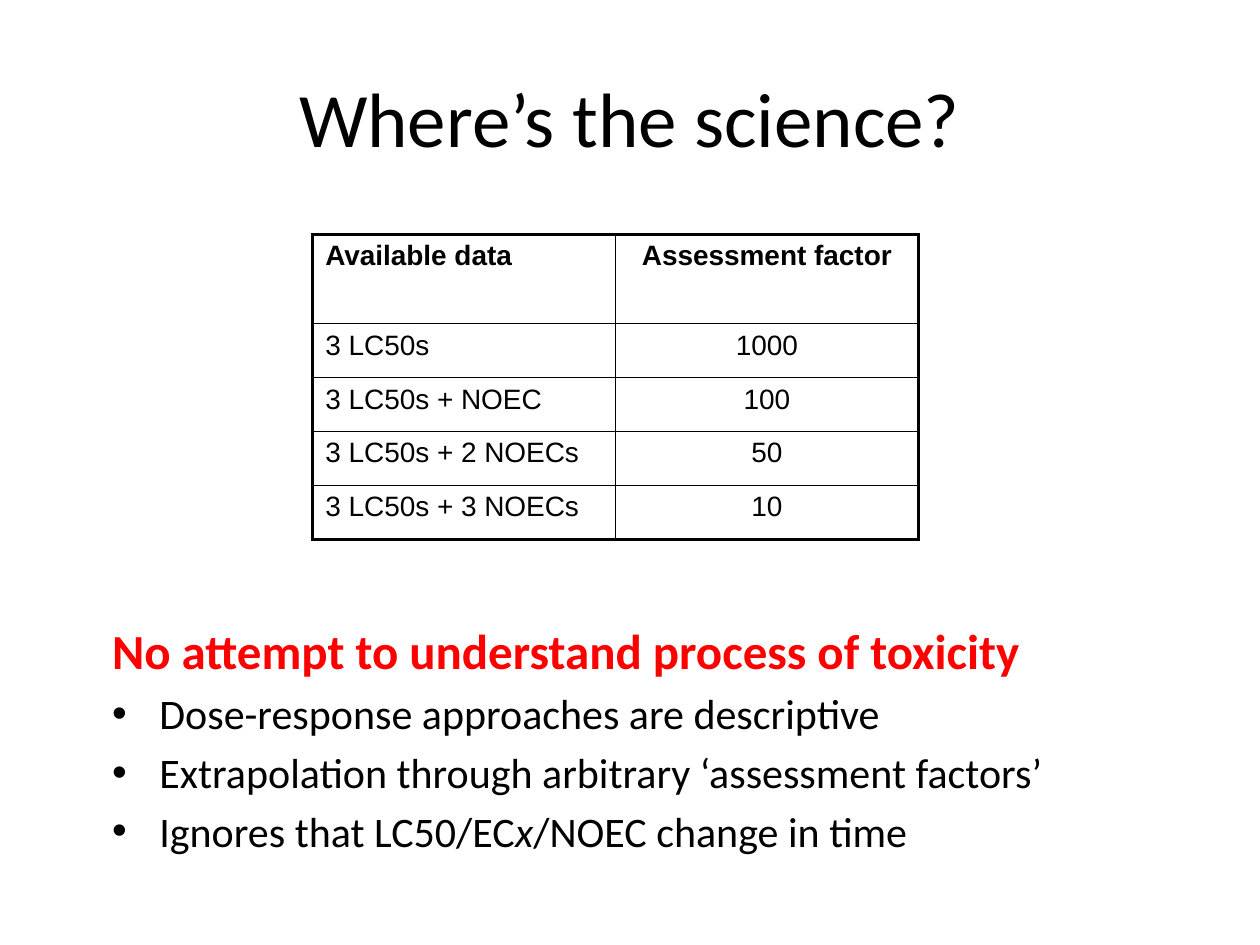
from pptx import Presentation
from pptx.dml.color import RGBColor as RGB
from pptx.enum.text import MSO_ANCHOR as Anchor, PP_ALIGN as Align
from pptx.oxml.ns import qn
from pptx.util import Pt
from lxml.etree import SubElement as Sub

BLACK = RGB(0, 0, 0)
RED = RGB(255, 0, 0)
THICK, THIN = 2.25, 1
INDENT = 27

ROWS = [
    ("Available data", "Assessment factor"),
    ("3 LC50s", "1000"),
    ("3 LC50s + NOEC", "100"),
    ("3 LC50s + 2 NOECs", "50"),
    ("3 LC50s + 3 NOECs", "10"),
]
POINTS = [
    [("Dose-response approaches are descriptive", False)],
    [("Extrapolation through arbitrary ‘assessment factors’", False)],
    [("Ignores that LC50/EC", False), ("x", True), ("/NOEC change in time", False)],
]


class Page:
    def __init__(self, slide, font, cell_font):
        self.slide = slide
        self.font = font
        self.cell_font = cell_font

    def box(self, left, top, width, height, anchor=Anchor.TOP):
        shape = self.slide.shapes.add_textbox(Pt(left), Pt(top), Pt(width), Pt(height))
        frame = shape.text_frame
        frame.word_wrap = True
        frame.vertical_anchor = anchor
        return frame

    def run(self, para, text, size, color=BLACK, bold=False, italic=False, name=None):
        run = para.add_run()
        run.text = text
        font = run.font
        font.name = name or self.font
        font.size = Pt(size)
        font.bold = bold
        font.italic = italic
        font.color.rgb = color

    def bullet(self, frame, parts, size):
        para = frame.add_paragraph()
        para.space_before = Pt(size * 0.2)
        props = para._p.get_or_add_pPr()
        props.set("marL", str(Pt(INDENT)))
        props.set("indent", str(Pt(-INDENT)))
        Sub(props, qn("a:buFont"), typeface="Arial")
        Sub(props, qn("a:buChar"), char="•")
        for text, italic in parts:
            self.run(para, text, size, italic=italic)

    def edge(self, cell, side, width):
        line = Sub(cell._tc.get_or_add_tcPr(), qn(f"a:ln{side}"), w=str(Pt(width)))
        fill = Sub(line, qn("a:solidFill"))
        Sub(fill, qn("a:srgbClr"), val=str(BLACK))

    def table(self, left, top, widths, heights, rows, size):
        frame = self.slide.shapes.add_table(
            len(rows), len(widths), Pt(left), Pt(top), Pt(sum(widths)), Pt(sum(heights))
        )
        table = frame.table
        table.first_row = table.horz_banding = False
        for col, width in zip(table.columns, widths):
            col.width = Pt(width)
        end_row, end_col = len(rows) - 1, len(widths) - 1
        for i, texts in enumerate(rows):
            table.rows[i].height = Pt(heights[i])
            for j, text in enumerate(texts):
                cell = table.cell(i, j)
                outer = {"L": j == 0, "R": j == end_col, "T": i == 0, "B": i == end_row}
                for side, thick in outer.items():
                    self.edge(cell, side, THICK if thick else THIN)
                cell.fill.background()
                para = cell.text_frame.paragraphs[0]
                para.alignment = Align.CENTER if j else Align.LEFT
                self.run(para, text, size, bold=i == 0, name=self.cell_font)


def main():
    deck = Presentation()
    deck.slide_width, deck.slide_height = Pt(720), Pt(540)
    page = Page(deck.slides.add_slide(deck.slide_layouts[6]), "Calibri", "Arial")

    title = page.box(36, 21.6, 648, 90, Anchor.MIDDLE).paragraphs[0]
    title.alignment = Align.CENTER
    page.run(title, "Where’s the science?", 44)

    body = page.box(57, 351, 612, 126)
    page.run(body.paragraphs[0], "No attempt to understand process of toxicity", 28, RED, True)
    for parts in POINTS:
        page.bullet(body, parts, 24)

    page.table(178.7, 134, [173, 173], [51] + [30.8] * 4, ROWS, 16)
    deck.save("out.pptx")


if __name__ == "__main__":
    main()
